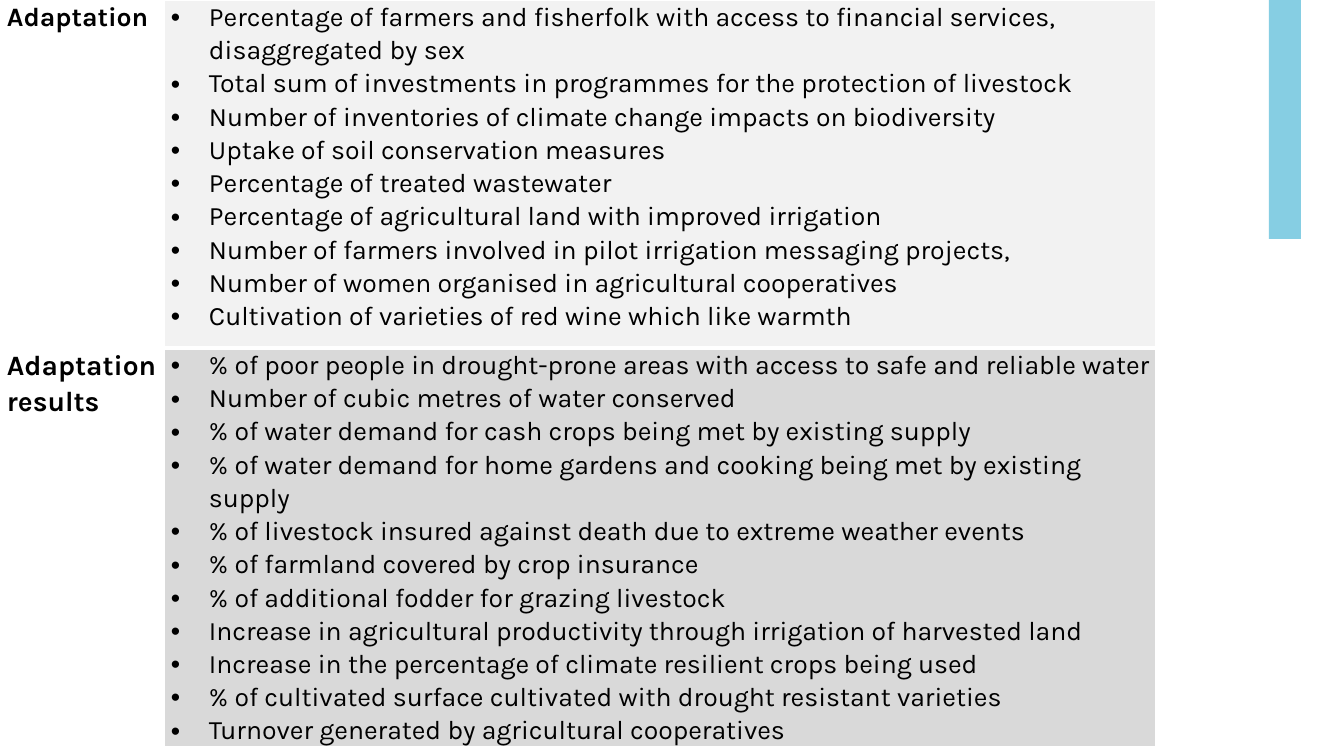
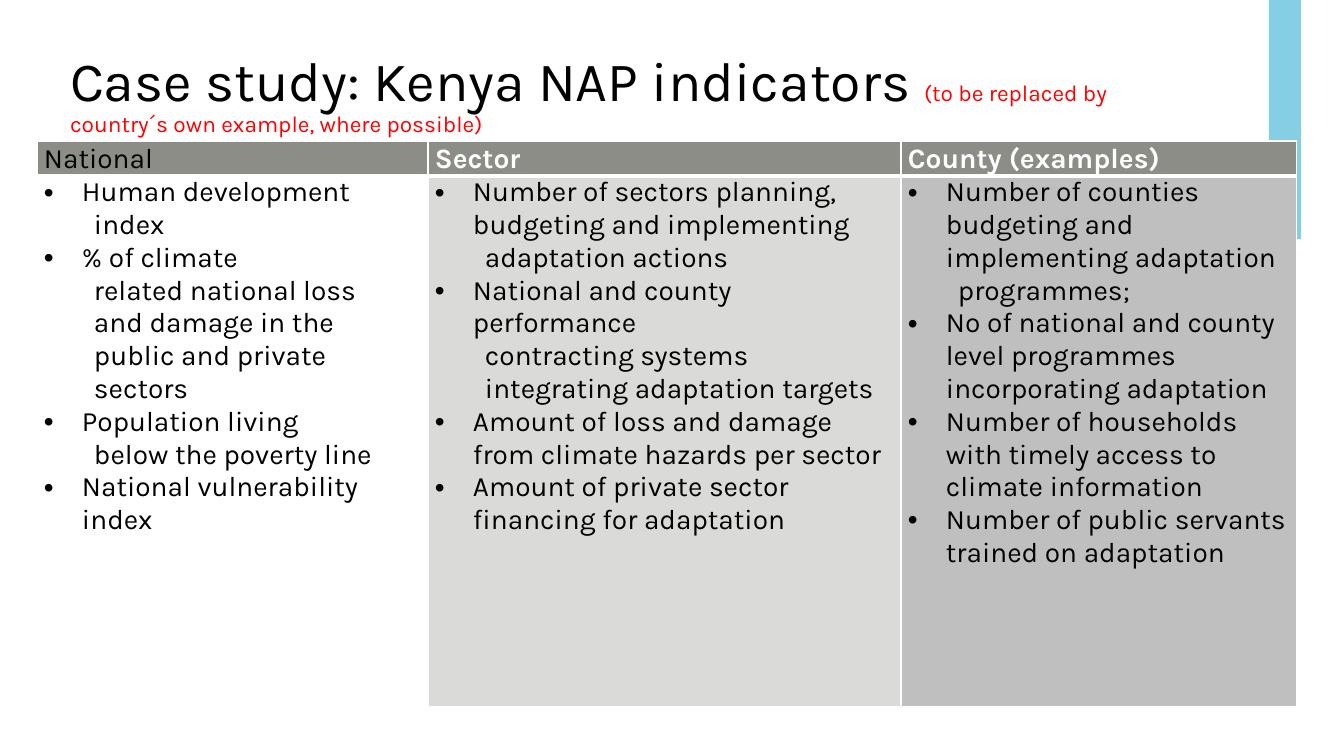
from pptx import Presentation
from pptx import util as u
from pptx.dml.color import RGBColor
from pptx.enum import shapes, text
from pptx.oxml import parse_xml
from pptx.oxml.ns import nsdecls

WIDE, HIGH = 1344, 756
SCALE = 12192000 / WIDE


def px(n):
    return u.Emu(round(n * SCALE))


def color(code):
    return RGBColor.from_string(code)


class Deck:
    """Holds the shared style and the current slide."""
    FONT = "Karla"
    BLACK, WHITE, RED = "000000", "FFFFFF", "FF0000"
    BAND, HEAD = "86CEE3", "8C8D86"
    HANG, DEEP = 38, 50

    def __init__(self):
        self.prs = Presentation()
        self.prs.slide_width, self.prs.slide_height = px(WIDE), px(HIGH)
        self.slide = None

    def page(self, title=None):
        layout = self.prs.slide_layouts[5 if title else 6]
        self.slide = self.prs.slides.add_slide(layout)
        self.band()
        if title:
            self.title(title)

    def band(self):
        bar = self.slide.shapes.add_shape(
            shapes.MSO_SHAPE.RECTANGLE, px(1269), 0, px(32), px(239))
        bar.shadow.inherit = False
        bar.fill.solid()
        bar.fill.fore_color.rgb = color(self.BAND)
        bar.line.fill.background()

    def title(self, parts):
        box = self.slide.shapes.title
        box.left, box.top, box.width, box.height = map(px, (60, 49, 1058, 80))
        frame = box.text_frame
        frame.word_wrap = True
        frame.auto_size = text.MSO_AUTO_SIZE.NONE
        frame.vertical_anchor = text.MSO_ANCHOR.TOP
        frame.margin_left, frame.margin_right = px(10), 0
        frame.margin_top = frame.margin_bottom = px(5)
        para = frame.paragraphs[0]
        para.alignment = text.PP_ALIGN.LEFT
        para.line_spacing = 0.89
        for words, size, ink in parts:
            self.run(para, words, size, ink)

    def run(self, para, words, size, ink=BLACK, bold=False):
        run = para.add_run()
        run.text = words
        font = run.font
        font.name, font.size, font.bold = self.FONT, u.Pt(size), bold
        font.color.rgb = color(ink)

    def table(self, left, top, cols, rows):
        frame = self.slide.shapes.add_table(
            len(rows), len(cols), px(left), px(top), px(sum(cols)), px(sum(rows)))
        grid = frame.table
        grid.first_row = grid.horz_banding = False
        for col, wide in zip(grid.columns, cols):
            col.width = px(wide)
        for row, high in zip(grid.rows, rows):
            row.height = px(high)
        for r in range(len(rows)):
            for c in range(len(cols)):
                self.edges(grid.cell(r, c), 3 if r == 0 else 1)
        # The heavy rule under the first row is also the top of the second
        return grid

    def edges(self, cell, base):
        props = cell._tc.get_or_add_tcPr()
        for side, wide in (("L", 1), ("R", 1), ("T", 1), ("B", base)):
            props.append(parse_xml(
                f'<a:ln{side} {nsdecls("a")} w="{u.Pt(wide)}"><a:solidFill>'
                f'<a:srgbClr val="{self.WHITE}"/></a:solidFill></a:ln{side}>'))

    def cell(self, cell, fill):
        cell.margin_left, cell.margin_right = px(7), px(5)
        cell.margin_top = cell.margin_bottom = 0
        if fill:
            cell.fill.solid()
            cell.fill.fore_color.rgb = color(fill)
        else:
            cell.fill.background()
        return cell.text_frame

    def label(self, cell, words, size, ink=BLACK, bold=True, fill=None):
        para = self.cell(cell, fill).paragraphs[0]
        para.line_spacing = 1.07
        self.run(para, words, size, ink, bold)

    def bullets(self, cell, items, size, space, fill=None):
        """Each item is a string, or a tuple whose later parts sit deeper."""
        frame = self.cell(cell, fill)
        para = frame.paragraphs[0]
        for item in items:
            lines = (item,) if isinstance(item, str) else item
            for n, line in enumerate(lines):
                para = para or frame.add_paragraph()
                para.line_spacing = space
                self.indent(para, n == 0)
                self.run(para, line, size)
                para = None

    def indent(self, para, mark):
        props = para._p.get_or_add_pPr()
        props.set("marL", str(px(self.HANG if mark else self.DEEP)))
        props.set("indent", str(px(-self.HANG if mark else 0)))
        if mark:
            props.append(parse_xml(f'<a:buFont {nsdecls("a")} typeface="Arial"/>'))
            props.append(parse_xml(f'<a:buChar {nsdecls("a")} char="•"/>'))
        else:
            props.append(parse_xml(f'<a:buNone {nsdecls("a")}/>'))


ACTIONS = [
    "Percentage of farmers and fisherfolk with access to financial services, "
    "disaggregated by sex",
    "Total sum of investments in programmes for the protection of livestock",
    "Number of inventories of climate change impacts on biodiversity",
    "Uptake of soil conservation measures",
    "Percentage of treated wastewater",
    "Percentage of agricultural land with improved irrigation",
    "Number of farmers involved in pilot irrigation messaging projects,",
    "Number of women organised in agricultural cooperatives",
    "Cultivation of varieties of red wine which like warmth",
]
RESULTS = [
    "% of poor people in drought-prone areas with access to safe and reliable water",
    "Number of cubic metres of water conserved",
    "% of water demand for cash crops being met by existing supply",
    "% of water demand for home gardens and cooking being met by existing supply",
    "% of livestock insured against death due to extreme weather events",
    "% of farmland covered by crop insurance",
    "% of additional fodder for grazing livestock",
    "Increase in agricultural productivity through irrigation of harvested land",
    "Increase in the percentage of climate resilient crops being used",
    "% of cultivated surface cultivated with drought resistant varieties",
    "Turnover generated by agricultural cooperatives",
]
NATION = [
    ("Human development", "index"),
    ("% of climate", "related national loss", "and damage in the",
     "public and private", "sectors"),
    ("Population living", "below the poverty line"),
    "National vulnerability index",
]
SECTOR = [
    ("Number of sectors planning, budgeting and implementing", "adaptation actions"),
    ("National and county performance",
     "contracting systems integrating adaptation targets"),
    "Amount of loss and damage from climate hazards per sector",
    "Amount of private sector financing for adaptation",
]
COUNTY = [
    ("Number of counties budgeting and implementing adaptation", "programmes;"),
    "No of national and county level programmes incorporating adaptation",
    "Number of households with timely access to climate information",
    "Number of public servants trained on adaptation",
]


def main():
    deck = Deck()

    # Adaptation indicators
    deck.page()
    grid = deck.table(0, 0, (164, 992), (348, 396))
    groups = (("Adaptation", 19, ACTIONS, "F2F2F2"),
              ("Adaptation results", 20, RESULTS, "D9D9D9"))
    for r, (name, size, items, fill) in enumerate(groups):
        deck.label(grid.cell(r, 0), name, size)
        deck.bullets(grid.cell(r, 1), items, 19, 1.07, fill)

    # Kenya case study
    deck.page([("Case study: Kenya NAP indicators ", 39.6, deck.BLACK),
               ("(to be replaced by country´s own example, where possible)",
                16.2, deck.RED)])
    grid = deck.table(37, 141, (391, 473, 396), (35, 531))
    levels = (("National", deck.BLACK, False, NATION, None),
              ("Sector", deck.WHITE, True, SECTOR, "DADBD9"),
              ("County (examples)", deck.WHITE, True, COUNTY, "BFBFBF"))
    for c, (name, ink, bold, items, fill) in enumerate(levels):
        deck.label(grid.cell(0, c), name, 20, ink, bold, deck.HEAD)
        deck.bullets(grid.cell(1, c), items, 20, 1.0, fill)

    deck.prs.save("out.pptx")


if __name__ == "__main__":
    main()
